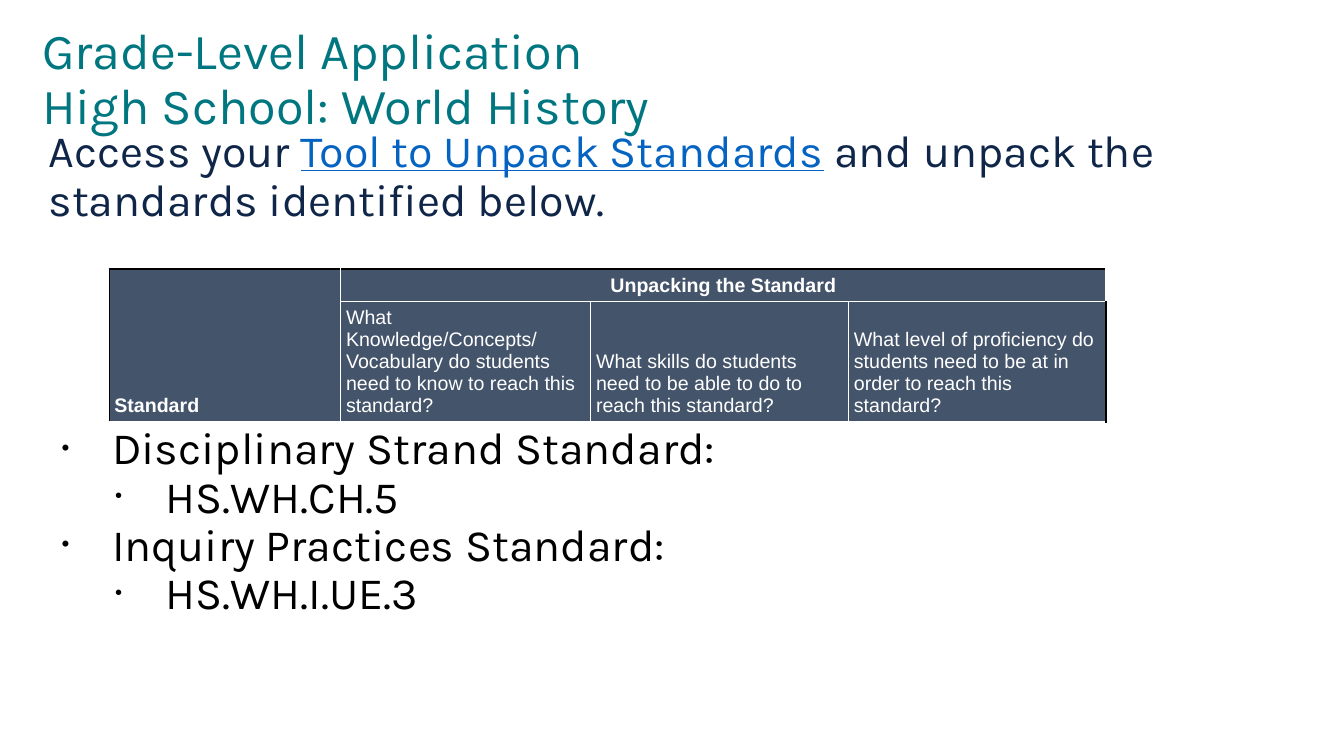
from lxml.etree import SubElement
from pptx import Presentation
from pptx.dml.color import RGBColor
from pptx.enum.text import MSO_ANCHOR, MSO_AUTO_SIZE, PP_ALIGN
from pptx.oxml import parse_xml
from pptx.oxml.ns import nsdecls, qn
from pptx.util import Cm, Pt

COLORS = {"teal": "007780", "navy": "102649", "link": "0563C1", "black": "000000",
          "white": "FFFFFF", "slate": "44546A"}
HEADERS = ["What Knowledge/Concepts/ Vocabulary do students need to know to reach this standard?",
           "What skills do students need to be able to do to reach this standard?",
           "What level of proficiency do students need to be at in order to reach this standard?"]
STANDARDS = [("Disciplinary Strand Standard:", "HS.WH.CH.5"),
             ("Inquiry Practices Standard:", "HS.WH.I.UE.3")]


def assign(target, values):
    """Set each attribute of target from a dict."""
    for name, value in values.items():
        setattr(target, name, value)


class Deck:
    """Hold the presentation, its current slide and the text style."""

    def __init__(self):
        """Open a wide presentation with one title and content slide."""
        self.prs = Presentation()
        assign(self.prs, {"slide_width": Cm(33.87), "slide_height": Cm(19.05)})
        self.s = self.prs.slides.add_slide(self.prs.slide_layouts[1])
        self.font = "Karla"

    def frame(self, index, left, top, width, height):
        """Place a placeholder and return its text frame."""
        sp = self.s.placeholders[index]
        assign(sp, {"left": Cm(left), "top": Cm(top), "width": Cm(width), "height": Cm(height)})
        tf = sp.text_frame
        assign(tf, {"word_wrap": True, "auto_size": MSO_AUTO_SIZE.NONE,
                    "vertical_anchor": MSO_ANCHOR.TOP})
        return tf

    def run(self, p, text, size, color, **style):
        """Add a formatted run."""
        r = p.add_run()
        r.text = text
        assign(r.font, {"name": self.font, "size": Pt(size), **style})
        r.font.color.rgb = RGBColor.from_string(COLORS[color])

    def paragraph(self, tf, runs, size, before=0, level=0, indent=0, bullet=None):
        """Add a paragraph of (text, color, style) runs, with a bullet of a given percentage."""
        p = tf.paragraphs[0] if not tf.paragraphs[0].runs else tf.add_paragraph()
        pPr = p._p.get_or_add_pPr()
        pPr.set("marL", str(Cm(indent)))
        pPr.set("indent", str(Cm(-1.27 if bullet else 0)))
        if bullet:
            SubElement(SubElement(pPr, qn("a:buClr")), qn("a:srgbClr"), val=COLORS["black"])
            SubElement(pPr, qn("a:buSzPct"), val=str(bullet * 1000))
            SubElement(pPr, qn("a:buFont"), typeface="Arial")
            SubElement(pPr, qn("a:buChar"), char="•")
        else:
            SubElement(pPr, qn("a:buNone"))
        assign(p, {"level": level, "alignment": PP_ALIGN.LEFT, "line_spacing": 0.9,
                   "space_before": Pt(before), "space_after": Pt(0)})
        for text, color, style in runs:
            self.run(p, text, size, color, **style)

    def table(self, left, top, widths, heights):
        """Add a slate table with black outer edges and white inner lines."""
        tb = self.s.shapes.add_table(len(heights), len(widths), Cm(left), Cm(top),
                                     Cm(sum(widths)), Cm(sum(heights))).table
        for col, width in zip(tb.columns, widths):
            col.width = Cm(width)
        for row, height in zip(tb.rows, heights):
            row.height = Cm(height)
        margins = {f"margin_{side}": Cm(0.13) for side in ("left", "right", "top", "bottom")}
        for i in range(len(heights)):
            for j in range(len(widths)):
                cell = tb.cell(i, j)
                assign(cell, {**margins, "vertical_anchor": MSO_ANCHOR.BOTTOM})
                cell.fill.solid()
                cell.fill.fore_color.rgb = RGBColor.from_string(COLORS["slate"])
                outer = {"L": j == 0, "R": j == len(widths) - 1, "T": i == 0, "B": False}
                self.borders(cell, outer)
        return tb

    def borders(self, cell, outer):
        """Draw the four borders of a cell."""
        tcPr = cell._tc.get_or_add_tcPr()
        for k, (side, edge) in enumerate(outer.items()):
            color = COLORS["black" if edge else "white"]
            tcPr.insert(k, parse_xml(
                f'<a:ln{side} {nsdecls("a")} w="12700"><a:solidFill><a:srgbClr val="{color}"/>'
                f'</a:solidFill></a:ln{side}>'))

    def cell_text(self, cell, text, bold=False):
        """Write a header into a cell."""
        p = cell.text_frame.paragraphs[0]
        self.run(p, text, 14, "white", name="Arial", bold=bold)
        return p


def main():
    """Build and save the slide."""
    deck = Deck()
    tf = deck.frame(0, 0.81, 0.53, 23.93, 3.66)
    for line in ("Grade-Level Application", "High School: World History"):
        deck.paragraph(tf, [(line, "teal", {})], 36)

    tf = deck.frame(1, 0.97, 3.12, 32.74, 13.61)
    deck.paragraph(tf, [("Access your ", "navy", {}),
                        ("Tool to Unpack Standards", "link", {"underline": True}),
                        (" and unpack the standards identified below.", "navy", {})], 32)
    for k, (strand, code) in enumerate(STANDARDS):
        deck.paragraph(tf, [(strand, "black", {})], 32, before=0 if k else 143,
                       indent=1.6, bullet=50)
        deck.paragraph(tf, [(code, "black", {})], 32, level=1, indent=2.95, bullet=45)

    tb = deck.table(2.75, 6.78, [5.84, 6.3, 6.5, 6.48], [0.82, 3.02])
    tb.cell(0, 0).merge(tb.cell(1, 0))
    tb.cell(0, 1).merge(tb.cell(0, 3))
    deck.cell_text(tb.cell(0, 0), "Standard", bold=True)
    tb.cell(0, 1).vertical_anchor = MSO_ANCHOR.MIDDLE
    p = deck.cell_text(tb.cell(0, 1), "Unpacking the Standard", bold=True)
    p.alignment = PP_ALIGN.CENTER
    for j, text in enumerate(HEADERS, 1):
        deck.cell_text(tb.cell(1, j), text)
    deck.prs.save("out.pptx")


if __name__ == "__main__":
    main()
